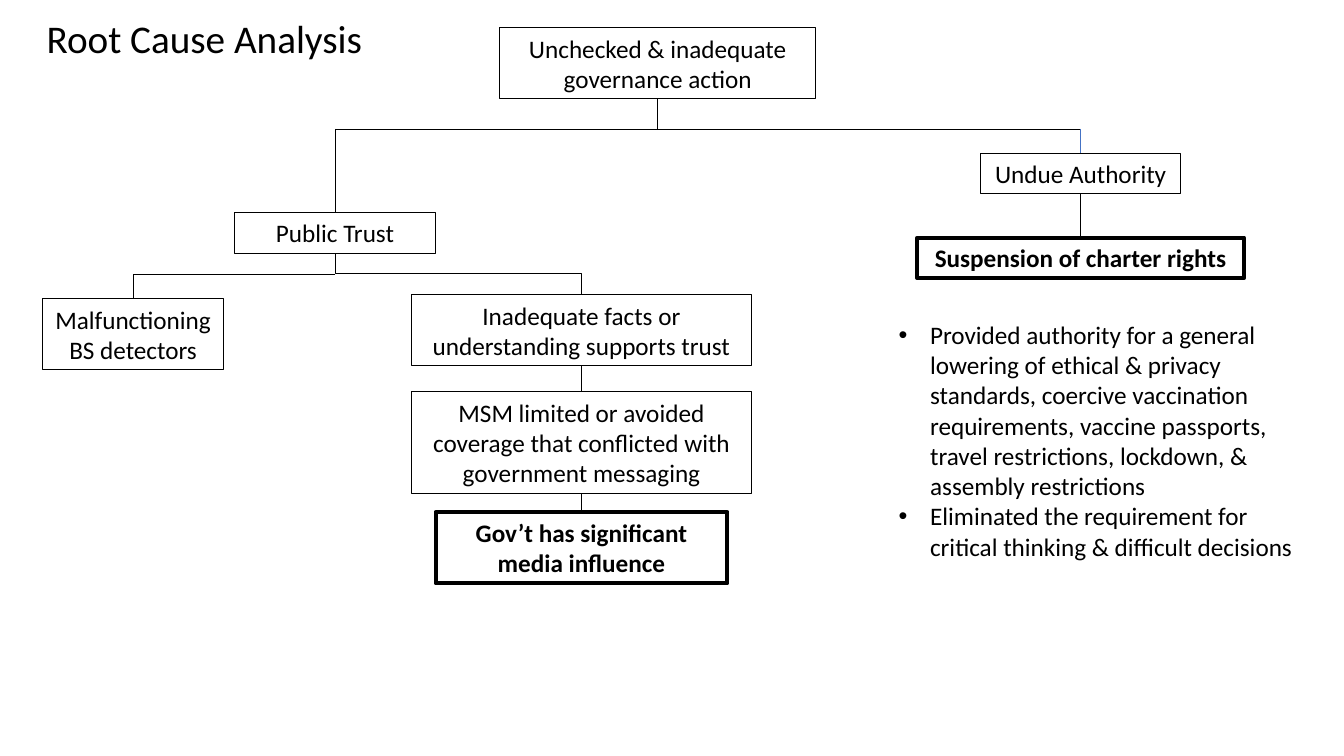
"""Build the root cause analysis tree slide."""
from dataclasses import dataclass

from pptx import Presentation
from pptx.dml.color import RGBColor as Rgb
from pptx.enum.shapes import MSO_CONNECTOR as Link, MSO_SHAPE as Form
from pptx.enum.text import MSO_ANCHOR as Anchor, MSO_AUTO_SIZE as Fit, PP_ALIGN as Align
from pptx.oxml.ns import qn
from pptx.shapes.base import BaseShape
from pptx.shapes.connector import Connector
from pptx.slide import Slide
from pptx.util import Cm, Pt
from lxml.etree import SubElement as Sub

HUES = {"ink": "000000", "blue": "4472C4"}
FONT = {"name": "Calibri", "size": Pt(18), "bold": False}
FRAME = {"word_wrap": True, "auto_size": Fit.SHAPE_TO_FIT_TEXT}
BAR = 3.25
FORK = 6.91
HANG = Cm(0.79)


@dataclass(frozen=True)
class Box:
    left: float
    top: float
    width: float
    height: float
    text: str
    bold: bool = False

    @property
    def mid(self) -> float:
        return self.left + self.width / 2

    @property
    def base(self) -> float:
        return self.top + self.height


@dataclass(frozen=True)
class Note:
    left: float
    top: float
    width: float
    height: float
    lines: tuple[str, ...]
    size: int
    dots: bool = False


@dataclass(frozen=True)
class Stem:
    x: float
    top: float
    base: float
    head: str = ""
    foot: str = ""
    hue: str = "ink"


BOXES = {
    "root": Box(12.6, 0.69, 7.95, 1.8, "Unchecked & inadequate governance action"),
    "power": Box(24.71, 3.86, 5.05, 1.02, "Undue Authority"),
    "facts": Box(10.36, 7.42, 8.59, 1.8, "Inadequate facts or understanding supports trust"),
    "sway": Box(10.98, 12.9, 7.35, 1.8, "Gov’t has significant media influence", True),
    "sense": Box(1.07, 7.52, 4.57, 1.8, "Malfunctioning BS detectors"),
    "rights": Box(23.12, 5.99, 8.23, 1.02, "Suspension of charter rights", True),
    "trust": Box(5.92, 5.36, 5.05, 1.02, "Public Trust"),
    "press": Box(10.36, 9.86, 8.59, 2.57,
                 "MSM limited or avoided coverage that conflicted with government messaging"),
}
NOTES = (
    Note(0.25, 0.23, 9.8, 1.45, ("Root Cause Analysis",), 28),
    Note(22.4, 7.92, 10.57, 6.4, (
        "Provided authority for a general lowering of ethical & privacy standards, "
        "coercive vaccination requirements, vaccine passports, travel restrictions, "
        "lockdown, & assembly restrictions",
        "Eliminated the requirement for critical thinking & difficult decisions",
    ), 18, True),
)
ROOT, TRUST, POWER = BOXES["root"], BOXES["trust"], BOXES["power"]
FACTS, SENSE = BOXES["facts"], BOXES["sense"]
CHAINS = (("power", "rights"), ("facts", "press"), ("press", "sway"))
STEMS = (
    Stem(ROOT.mid, ROOT.base, BAR, head="root"),
    Stem(TRUST.mid, BAR, TRUST.top, foot="trust"),
    Stem(POWER.mid, BAR, POWER.top, foot="power", hue="blue"),
    *(Stem(BOXES[a].mid, BOXES[a].base, BOXES[b].top, a, b) for a, b in CHAINS),
)


def write(shape: BaseShape, lines: tuple[str, ...], style: dict, dots: bool = False) -> None:
    """Fill a shape with styled paragraphs."""
    frame = shape.text_frame
    for key, val in FRAME.items():
        setattr(frame, key, val)
    frame.text = "\n".join(lines)
    for para in frame.paragraphs:
        para.alignment = Align.LEFT if dots else Align.CENTER
        font = para.runs[0].font
        for key, val in {**FONT, **style}.items():
            setattr(font, key, val)
        font.color.rgb = Rgb.from_string(HUES["ink"])
        if dots:
            props = para._p.get_or_add_pPr()
            props.set("marL", str(HANG))
            props.set("indent", str(-HANG))
            Sub(props, qn("a:buFont"), typeface="Arial")
            Sub(props, qn("a:buChar"), char="•")


def draw_box(slide: Slide, box: Box) -> BaseShape:
    """Draw one framed cause."""
    shape = slide.shapes.add_shape(
        Form.RECTANGLE, Cm(box.left), Cm(box.top), Cm(box.width), Cm(box.height))
    shape.shadow.inherit = False
    shape.fill.background()
    shape.line.color.rgb = Rgb.from_string(HUES["ink"])
    shape.line.width = Pt(3 if box.bold else 0.75)
    shape.text_frame.vertical_anchor = Anchor.MIDDLE
    write(shape, (box.text,), {"bold": box.bold})
    return shape


def draw_note(slide: Slide, note: Note) -> None:
    """Draw one unframed text."""
    shape = slide.shapes.add_textbox(
        Cm(note.left), Cm(note.top), Cm(note.width), Cm(note.height))
    write(shape, note.lines, {"size": Pt(note.size)}, note.dots)


def draw_line(slide: Slide, x1: float, y1: float, x2: float, y2: float,
              kind: Link = Link.STRAIGHT, hue: str = "ink") -> Connector:
    """Draw one thin connector."""
    line = slide.shapes.add_connector(kind, Cm(x1), Cm(y1), Cm(x2), Cm(y2))
    line.line.color.rgb = Rgb.from_string(HUES[hue])
    line.line.width = Pt(0.5)
    Sub(line._element.spPr, qn("a:effectLst"))
    return line


def draw_stem(slide: Slide, stem: Stem, shapes: dict[str, BaseShape]) -> None:
    """Draw a vertical line and join it to its boxes."""
    line = draw_line(slide, stem.x, stem.top, stem.x, stem.base, hue=stem.hue)
    if stem.head:
        line.begin_connect(shapes[stem.head], 2)
    if stem.foot:
        line.end_connect(shapes[stem.foot], 0)


def draw_fork(slide: Slide) -> None:
    """Draw the elbows below the trust box."""
    mid_x, mid_y = (TRUST.mid + FACTS.mid) / 2, (TRUST.base + FACTS.top) / 2
    half_w, half_h = (FACTS.top - TRUST.base) / 2, (FACTS.mid - TRUST.mid) / 2
    right = draw_line(slide, mid_x + half_w, mid_y - half_h,
                      mid_x - half_w, mid_y + half_h, Link.ELBOW)
    right._element.spPr.find(qn("a:xfrm")).set("rot", str(270 * 60000))
    left = draw_line(slide, TRUST.mid, FORK, SENSE.mid, SENSE.top, Link.ELBOW)
    left._element.spPr.find(qn("a:prstGeom")).set("prst", "bentConnector2")


def main() -> None:
    """Build and save the slide."""
    deck = Presentation()
    deck.slide_width, deck.slide_height = Cm(33.87), Cm(19.05)
    slide = deck.slides.add_slide(deck.slide_layouts[6])
    shapes = {key: draw_box(slide, box) for key, box in BOXES.items()}
    for note in NOTES:
        draw_note(slide, note)
    draw_line(slide, POWER.mid, BAR, TRUST.mid, BAR)
    for stem in STEMS:
        draw_stem(slide, stem, shapes)
    draw_fork(slide)
    deck.save("out.pptx")


if __name__ == "__main__":
    main()
